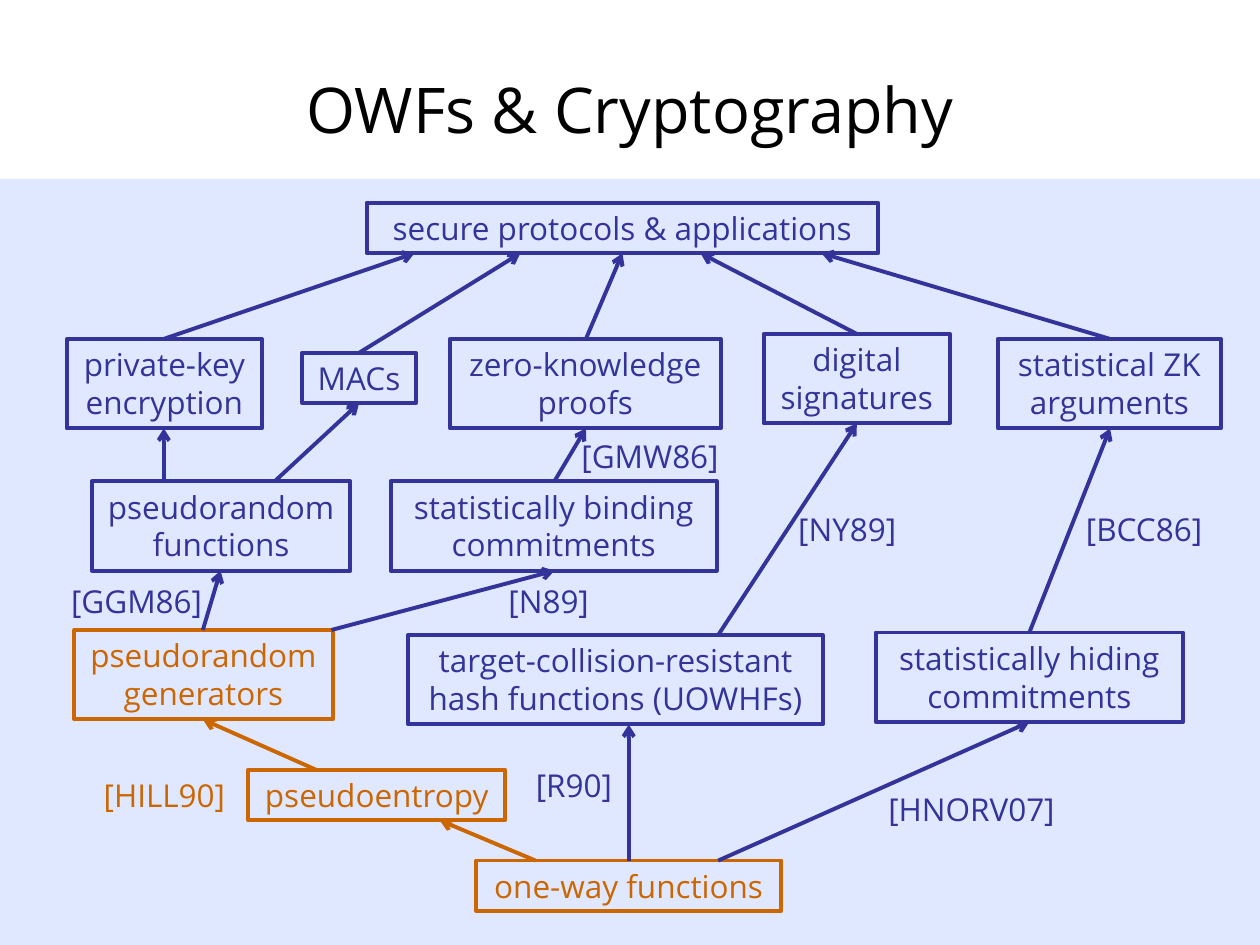
from dataclasses import dataclass

from lxml import etree
from pptx import Presentation
from pptx.dml.color import RGBColor
from pptx.enum.shapes import MSO_CONNECTOR, MSO_SHAPE
from pptx.enum.text import MSO_ANCHOR, MSO_AUTO_SIZE, PP_ALIGN
from pptx.oxml.ns import qn
from pptx.util import Inches, Pt

RECTANGLE = MSO_SHAPE.RECTANGLE
STRAIGHT = MSO_CONNECTOR.STRAIGHT
CENTER = PP_ALIGN.CENTER
MIDDLE = MSO_ANCHOR.MIDDLE
FIT_SHAPE = MSO_AUTO_SIZE.SHAPE_TO_FIT_TEXT

FONT = "Open Sans"
BLUE, ORANGE, BLACK, BAND = "333399", "CC6600", "000000", "3366FF"
LINE_WIDTH = Pt(2.25)
ONE_LINE, TWO_LINES = 0.4, 0.71


@dataclass(frozen=True)
class Node:
    """A boxed notion; its height follows from its number of lines."""
    text: str
    left: float
    top: float
    width: float
    color: str = BLUE

    @property
    def height(self) -> float:
        return TWO_LINES if "\n" in self.text else ONE_LINE

    @property
    def bottom(self) -> float:
        return self.top + self.height


@dataclass(frozen=True)
class Arrow:
    """An implication from the top of one node to the bottom of another."""
    source: str
    target: str
    start_x: float
    end_x: float
    color: str = BLUE


@dataclass(frozen=True)
class Citation:
    text: str
    left: float
    top: float
    width: float
    color: str = BLUE


NODES = {
    "owf": Node("one-way functions", 3.78, 6.83, 2.42, ORANGE),
    "entropy": Node("pseudoentropy", 1.97, 6.11, 2.04, ORANGE),
    "prg": Node("pseudorandom\ngenerators", 0.59, 5, 2.05, ORANGE),
    "hash": Node("target-collision-resistant\nhash functions (UOWHFs)", 3.24, 5.04, 3.29),
    "hiding": Node("statistically hiding\ncommitments", 6.95, 5.02, 2.44),
    "prf": Node("pseudorandom\nfunctions", 0.73, 3.82, 2.05),
    "binding": Node("statistically binding\ncommitments", 3.1, 3.82, 2.59),
    "encryption": Node("private-key\nencryption", 0.53, 2.69, 1.55),
    "macs": Node("MACs", 2.4, 2.8, 0.9),
    "zk": Node("zero-knowledge\nproofs", 3.57, 2.69, 2.15),
    "signatures": Node("digital\nsignatures", 6.06, 2.65, 1.48),
    "arguments": Node("statistical ZK\narguments", 7.92, 2.69, 1.77),
    "protocols": Node("secure protocols & applications", 2.91, 1.61, 4.06),
}

ARROWS = [
    Arrow("owf", "entropy", 4.25, 3.49, ORANGE),
    Arrow("entropy", "prg", 2.51, 1.61, ORANGE),
    Arrow("owf", "hash", 4.99, 4.99),
    Arrow("owf", "hiding", 5.7, 8.17),
    Arrow("prg", "prf", 1.61, 1.75),
    Arrow("prg", "binding", 2.63, 4.4),
    Arrow("hash", "signatures", 5.7, 6.8),
    Arrow("hiding", "arguments", 8.17, 8.81),
    Arrow("prf", "encryption", 1.3, 1.3),
    Arrow("prf", "macs", 2.18, 2.85),
    Arrow("binding", "zk", 4.4, 4.65),
    Arrow("encryption", "protocols", 1.3, 3.29),
    Arrow("macs", "protocols", 2.85, 4.13),
    Arrow("zk", "protocols", 4.65, 4.94),
    Arrow("signatures", "protocols", 6.8, 5.56),
    Arrow("arguments", "protocols", 8.81, 6.52),
]

CITATIONS = [
    Citation("[HILL90]", 0.7, 6.11, 1.21, ORANGE),
    Citation("[R90]", 4.13, 6.03, 0.85),
    Citation("[HNORV07]", 6.92, 6.22, 1.58),
    Citation("[GGM86]", 0.45, 4.57, 1.27),
    Citation("[N89]", 3.92, 4.57, 0.87),
    Citation("[GMW86]", 4.51, 3.42, 1.3),
    Citation("[NY89]", 6.21, 4, 1.03),
    Citation("[BCC86]", 8.49, 4, 1.18),
]


def rgb(color: str) -> RGBColor:
    return RGBColor.from_string(color)


def write(frame, text: str, size: float, color: str) -> None:
    frame.text = text
    for paragraph in frame.paragraphs:
        paragraph.alignment = CENTER
        paragraph.font.name = FONT
        paragraph.font.size = Pt(size)
        paragraph.font.color.rgb = rgb(color)


def write_label(frame, text: str, color: str) -> None:
    write(frame, text, 18, color)
    frame.word_wrap = False
    frame.auto_size = FIT_SHAPE
    frame.vertical_anchor = MSO_ANCHOR.TOP


def draw_band(slide) -> None:
    band = slide.shapes.add_shape(
        RECTANGLE, Inches(0), Inches(1.42), Inches(10), Inches(6.08))
    band.shadow.inherit = False
    band.line.fill.background()
    band.fill.solid()
    band.fill.fore_color.rgb = rgb(BAND)
    # 15 % opacity
    color = band._element.spPr.find(qn("a:solidFill")).find(qn("a:srgbClr"))
    etree.SubElement(color, qn("a:alpha")).set("val", "15000")


def draw_node(slide, node: Node) -> None:
    box = slide.shapes.add_shape(
        RECTANGLE, Inches(node.left), Inches(node.top),
        Inches(node.width), Inches(node.height))
    box.shadow.inherit = False
    box.fill.background()
    box.line.color.rgb = rgb(node.color)
    box.line.width = LINE_WIDTH
    write_label(box.text_frame, node.text, node.color)


def draw_arrow(slide, arrow: Arrow) -> None:
    source, target = NODES[arrow.source], NODES[arrow.target]
    connector = slide.shapes.add_connector(
        STRAIGHT, Inches(arrow.start_x), Inches(source.top),
        Inches(arrow.end_x), Inches(target.bottom))
    connector.line.color.rgb = rgb(arrow.color)
    connector.line.width = LINE_WIDTH
    # Open arrowhead, no shadow
    properties = connector._element.spPr
    line = properties.find(qn("a:ln"))
    etree.SubElement(line, qn("a:tailEnd")).set("type", "arrow")
    etree.SubElement(properties, qn("a:effectLst"))


def draw_citation(slide, citation: Citation) -> None:
    box = slide.shapes.add_textbox(
        Inches(citation.left), Inches(citation.top),
        Inches(citation.width), Inches(ONE_LINE))
    write_label(box.text_frame, citation.text, citation.color)


def main() -> None:
    deck = Presentation()
    deck.slide_width, deck.slide_height = Inches(10), Inches(7.5)
    slide = deck.slides.add_slide(deck.slide_layouts[5])
    draw_band(slide)

    # Title
    title = slide.shapes.title
    title.left, title.top = Inches(0.5), Inches(0.36)
    title.width, title.height = Inches(9), Inches(1)
    write(title.text_frame, "OWFs & Cryptography", 36, BLACK)
    title.text_frame.vertical_anchor = MIDDLE

    # Diagram
    for node in NODES.values():
        draw_node(slide, node)
    for arrow in ARROWS:
        draw_arrow(slide, arrow)
    for citation in CITATIONS:
        draw_citation(slide, citation)
    deck.save("out.pptx")


if __name__ == "__main__":
    main()
